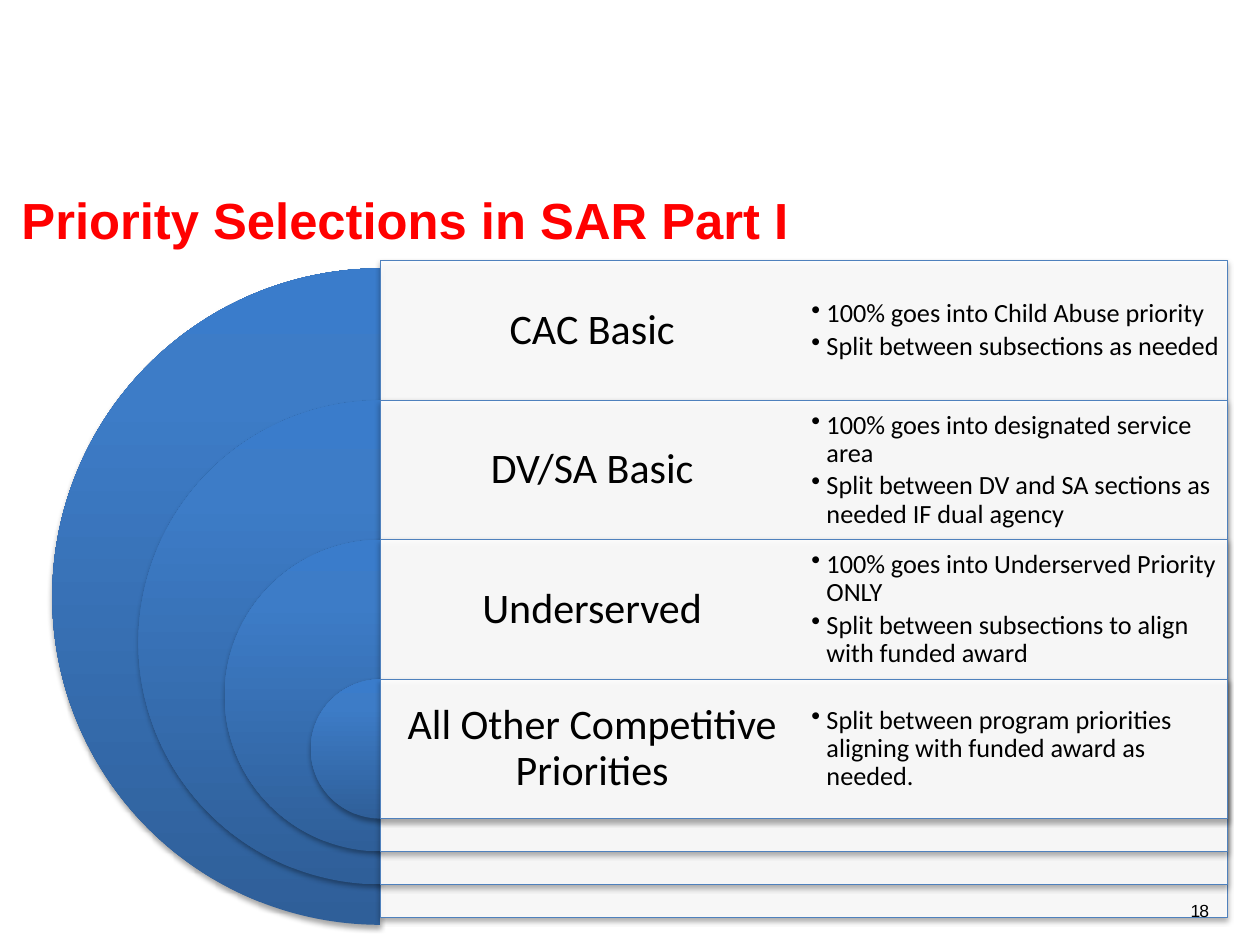
from copy import deepcopy
from dataclasses import dataclass

from lxml.etree import SubElement
from pptx import Presentation
from pptx.dml.color import RGBColor
from pptx.enum.shapes import MSO_SHAPE
from pptx.enum.text import MSO_ANCHOR, PP_ALIGN
from pptx.oxml.ns import qn
from pptx.util import Inches, Pt

TITLE = "Priority Selections in SAR Part I"
PAGE_NUMBER = "18"
PRIORITIES = [
    ("CAC Basic", ["100% goes into Child Abuse priority",
                   "Split between subsections as needed"]),
    ("DV/SA Basic", ["100% goes into designated service area",
                     "Split between DV and SA sections as needed IF dual agency"]),
    ("Underserved", ["100% goes into Underserved Priority ONLY",
                     "Split between subsections to align with funded award"]),
    ("All Other Competitive Priorities",
     ["Split between program priorities aligning with funded award as needed."]),
]


@dataclass(frozen=True)
class Theme:
    title: RGBColor = RGBColor(0xFF, 0x00, 0x00)
    text: RGBColor = RGBColor(0x00, 0x00, 0x00)
    panel: RGBColor = RGBColor(0xFF, 0xFF, 0xFF)
    outline: RGBColor = RGBColor(0x4F, 0x81, 0xBD)
    gradient: tuple = ((0, RGBColor(0x2F, 0x5F, 0x99)),
                       (0.8, RGBColor(0x3D, 0x7C, 0xC7)),
                       (1, RGBColor(0x3A, 0x7C, 0xCB)))
    heading_font: str = "Arial"
    body_font: str = "Calibri"
    title_size: float = 29
    label_size: float = 24
    detail_size: float = 15
    number_size: float = 10


THEME = Theme()
SLIDE_WIDTH, SLIDE_HEIGHT = 10, 7.5
PANEL_LEFT, PANEL_TOP = 3.02, 2.07
COLUMN_WIDTH = 3.36
ROW_HEIGHT = 1.107
OUTER_DIAMETER, DIAMETER_STEP = 5.21, 1.368
FIRST_PIE_DROP = 0.06
BULLET_INDENT = 0.12


def box(left, top, width, height):
    return [Inches(value) for value in (left, top, width, height)]


def add_shadow(shape):
    shape.shadow.inherit = False
    effects = shape._element.spPr.find(qn("a:effectLst"))
    shadow = SubElement(effects, qn("a:outerShdw"), blurRad=str(Pt(3.1)),
                        dist=str(Pt(1.8)), dir="5400000", rotWithShape="0")
    color = SubElement(shadow, qn("a:srgbClr"), val="000000")
    SubElement(color, qn("a:alpha"), val="35000")


def add_half_disc(slide, top, diameter):
    pie = slide.shapes.add_shape(
        MSO_SHAPE.PIE, *box(PANEL_LEFT - diameter / 2, top, diameter, diameter))
    pie.adjustments[0], pie.adjustments[1] = 54, 162
    pie.fill.gradient()
    pie.fill.gradient_angle = 90
    stop_list = pie._element.spPr.find(".//" + qn("a:gsLst"))
    stop_list.append(deepcopy(stop_list[-1]))
    for stop, (position, color) in zip(pie.fill.gradient_stops, THEME.gradient):
        stop.position = position
        stop.color.rgb = color
    pie.line.fill.background()
    add_shadow(pie)


def add_panel(slide, top, height):
    panel = slide.shapes.add_shape(
        MSO_SHAPE.RECTANGLE, *box(PANEL_LEFT, top, 2 * COLUMN_WIDTH, height))
    panel.fill.solid()
    panel.fill.fore_color.rgb = THEME.panel
    color = panel._element.spPr.find(qn("a:solidFill"))[0]
    SubElement(color, qn("a:alpha"), val="90000")
    panel.line.color.rgb = THEME.outline
    panel.line.width = Pt(0.75)
    add_shadow(panel)


def prepare_frame(frame, margin, anchor):
    frame.word_wrap = True
    frame.vertical_anchor = anchor
    frame.margin_left = frame.margin_right = Inches(margin)
    frame.margin_top = frame.margin_bottom = Inches(margin)


def add_run(paragraph, text, font_name, size, color, bold=False):
    run = paragraph.add_run()
    run.text = text
    run.font.name = font_name
    run.font.size = Pt(size)
    run.font.color.rgb = color
    run.font.bold = bold
    return run


def add_cell(slide, column, top, texts, size, margin, gap_share, bulleted=False):
    left = PANEL_LEFT + column * COLUMN_WIDTH
    frame = slide.shapes.add_textbox(
        *box(left, top, COLUMN_WIDTH, ROW_HEIGHT)).text_frame
    prepare_frame(frame, margin, MSO_ANCHOR.MIDDLE)
    for index, text in enumerate(texts):
        paragraph = frame.add_paragraph() if index else frame.paragraphs[0]
        if bulleted:
            paragraph.level = 1
            properties = paragraph._p.get_or_add_pPr()
            properties.set("marL", str(Inches(BULLET_INDENT)))
            properties.set("indent", str(-Inches(BULLET_INDENT)))
            SubElement(properties, qn("a:buChar"), char="•")
        else:
            paragraph.alignment = PP_ALIGN.CENTER
        paragraph.line_spacing = 0.9
        paragraph.space_after = Pt(size * gap_share)
        add_run(paragraph, text, THEME.body_font, size, THEME.text)


def add_title(slide):
    title = slide.shapes.title
    title.left, title.top, title.width, title.height = box(0.17, 1.5, 9.47, 0.49)
    prepare_frame(title.text_frame, 0, MSO_ANCHOR.TOP)
    paragraph = title.text_frame.paragraphs[0]
    paragraph.alignment = PP_ALIGN.LEFT
    add_run(paragraph, TITLE, THEME.heading_font, THEME.title_size, THEME.title, True)


def add_page_number(slide):
    frame = slide.shapes.add_textbox(*box(9.33, 7.14, 0.4, 0.17)).text_frame
    prepare_frame(frame, 0, MSO_ANCHOR.TOP)
    paragraph = frame.paragraphs[0]
    paragraph._p.get_or_add_pPr().set("marL", str(Inches(BULLET_INDENT)))
    run = add_run(paragraph, PAGE_NUMBER, THEME.heading_font, THEME.number_size,
                  THEME.text)
    run.font._element.set("spc", "-50")


def main():
    presentation = Presentation()
    presentation.slide_width = Inches(SLIDE_WIDTH)
    presentation.slide_height = Inches(SLIDE_HEIGHT)
    slide = presentation.slides.add_slide(presentation.slide_layouts[5])
    add_title(slide)

    tops = [PANEL_TOP + row * ROW_HEIGHT for row in range(len(PRIORITIES))]
    for row, (top, (label, _)) in enumerate(zip(tops, PRIORITIES)):
        diameter = OUTER_DIAMETER - row * DIAMETER_STEP
        add_half_disc(slide, top + (0 if row else FIRST_PIE_DROP), diameter)
        add_panel(slide, top, diameter)
        add_cell(slide, 0, top, [label], THEME.label_size, 0.1, 0.35)
    for top, (_, details) in zip(tops, PRIORITIES):
        add_cell(slide, 1, top, details, THEME.detail_size, 0.06, 0.15, bulleted=True)

    add_page_number(slide)
    presentation.save("out.pptx")


if __name__ == "__main__":
    main()
